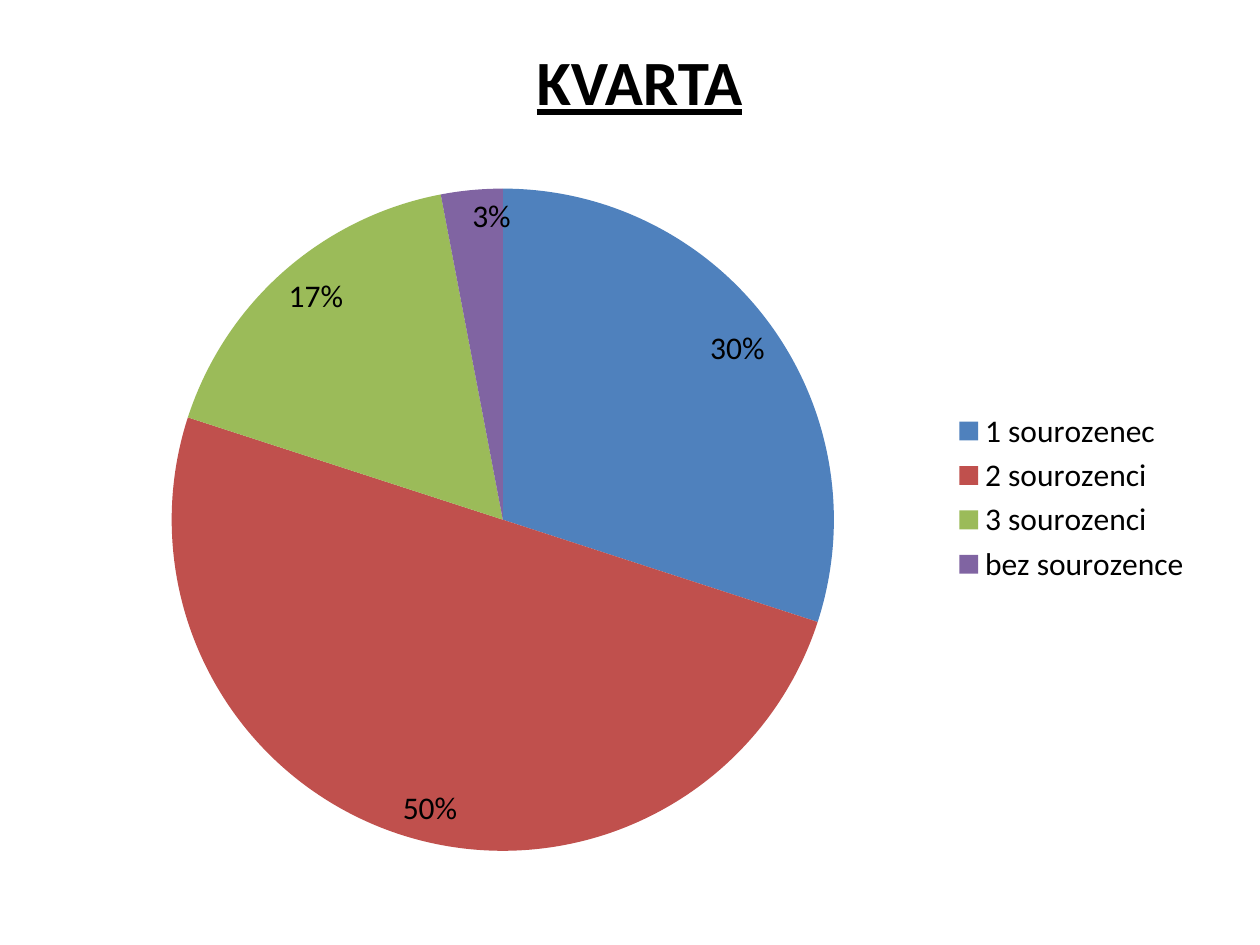
from dataclasses import dataclass

from lxml import etree
from pptx import Presentation
from pptx.chart.chart import Chart
from pptx.chart.data import CategoryChartData
from pptx.dml.color import RGBColor
from pptx.enum.chart import XL_CHART_TYPE, XL_LABEL_POSITION, XL_LEGEND_POSITION
from pptx.enum.text import PP_ALIGN
from pptx.oxml.ns import qn
from pptx.util import Inches, Pt

PIE = XL_CHART_TYPE.PIE
INSIDE = XL_LABEL_POSITION.INSIDE_END
RIGHT = XL_LEGEND_POSITION.RIGHT
CENTER = PP_ALIGN.CENTER
FONT = "Calibri"
COLORS = {
    "black": "000000",
    "blue": "4F81BD",
    "red": "C0504D",
    "green": "9BBB59",
    "purple": "8064A2",
}


@dataclass
class Slice:
    """One group of pupils in the pie."""
    label: str
    share: int
    color: str


SLICES = [
    Slice("1 sourozenec", 30, "blue"),
    Slice("2 sourozenci", 50, "red"),
    Slice("3 sourozenci", 17, "green"),
    Slice("bez sourozence", 3, "purple"),
]


def rgb(name: str) -> RGBColor:
    """Look up a named colour."""
    return RGBColor.from_string(COLORS[name])


def add_title(slide, text: str) -> None:
    """Add the underlined heading."""
    box = slide.shapes.add_textbox(Inches(0.43), Inches(0.29), Inches(9.29), Inches(0.71))
    frame = box.text_frame
    frame.word_wrap = True
    frame.text = text
    para = frame.paragraphs[0]
    para.alignment = CENTER
    font = para.runs[0].font
    font.name, font.size = FONT, Pt(36)
    font.bold = font.underline = True
    font.color.rgb = rgb("black")


def place_plot(chart: Chart, **parts: float) -> None:
    """Fix the inner plot area as fractions of the chart."""
    area = chart._chartSpace.chart.plotArea
    for old in area.findall(qn("c:layout")):
        area.remove(old)
    layout = etree.Element(qn("c:layout"))
    area.insert(0, layout)
    manual = etree.SubElement(layout, qn("c:manualLayout"))
    modes = {"layoutTarget": "inner", "xMode": "edge", "yMode": "edge"}
    for tag, value in {**modes, **parts}.items():
        etree.SubElement(manual, qn(f"c:{tag}")).set("val", str(value))


def add_pie(slide, slices: list[Slice]) -> None:
    """Add the pie chart with its labels and legend."""
    data = CategoryChartData()
    data.categories = [part.label for part in slices]
    data.add_series("Series 1", [part.share for part in slices])
    frame = slide.shapes.add_chart(
        PIE, Inches(0.43), Inches(1.03), Inches(9.13), Inches(5.84), data)
    chart = frame.chart
    chart.has_title = False
    chart.font.name, chart.font.size = FONT, Pt(18)
    chart.font.color.rgb = rgb("black")
    chart.has_legend = True
    chart.legend.position = RIGHT
    chart.legend.include_in_layout = False
    plot = chart.plots[0]
    plot.vary_by_categories = True
    for index, part in enumerate(slices):
        fill = plot.series[0].points[index].format.fill
        fill.solid()
        fill.fore_color.rgb = rgb(part.color)
    plot.has_data_labels = True
    labels = plot.data_labels
    labels.show_percentage = True
    labels.show_value = False
    labels.number_format = "0%"
    labels.number_format_is_linked = False
    labels.position = INSIDE
    place_plot(chart, x=0.1, y=0.08, w=0.58, h=0.9)


def main() -> None:
    """Build and save the slide."""
    deck = Presentation()
    deck.slide_width, deck.slide_height = Inches(10), Inches(7.5)
    slide = deck.slides.add_slide(deck.slide_layouts[6])
    add_title(slide, "KVARTA")
    add_pie(slide, SLICES)
    deck.save("out.pptx")


if __name__ == "__main__":
    main()
